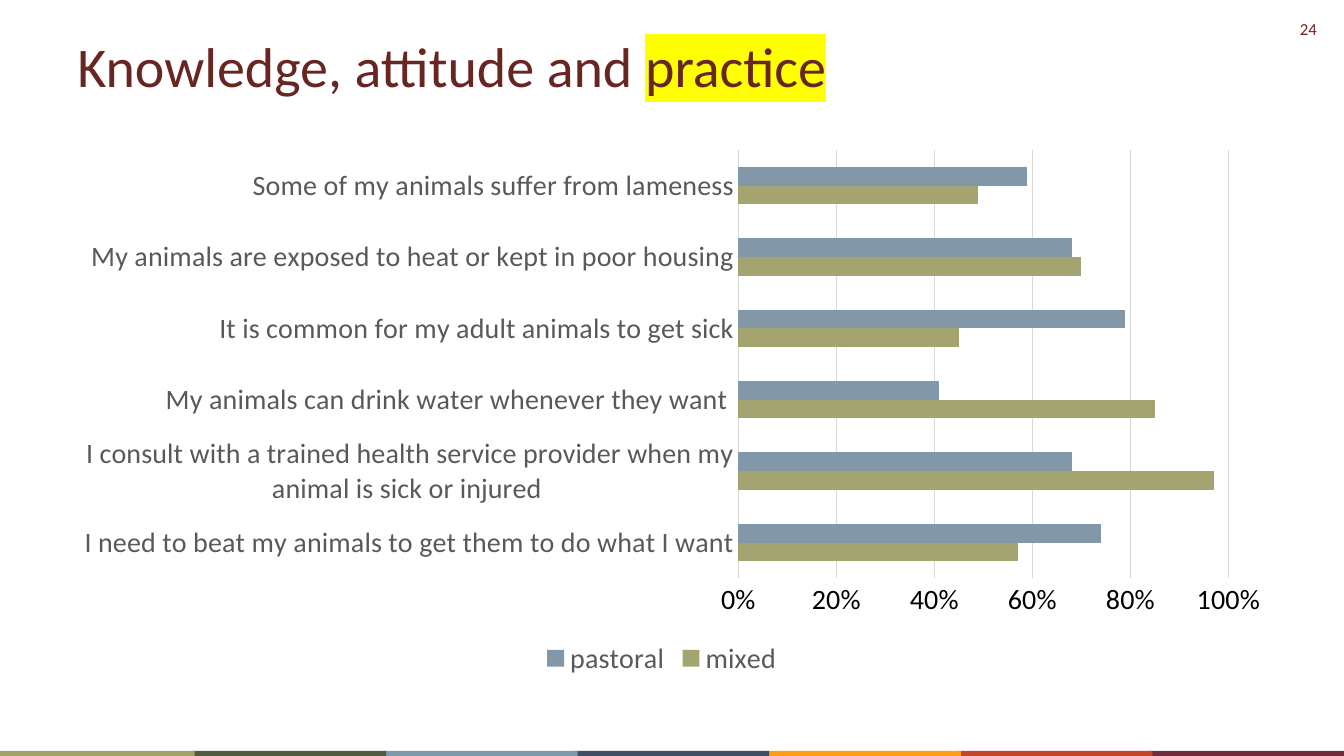
from lxml import etree
from pptx import Presentation
from pptx.chart.data import CategoryChartData
from pptx.dml.color import RGBColor
from pptx.enum.chart import XL_CHART_TYPE as ChartType, XL_LEGEND_POSITION as LegendPosition
from pptx.enum.chart import XL_TICK_MARK as TickMark
from pptx.enum.shapes import MSO_SHAPE as Preset
from pptx.enum.text import PP_ALIGN as Align
from pptx.oxml import parse_xml
from pptx.oxml.ns import qn
from pptx.util import Inches, Pt

FONT = "Calibri"
GRAY = "595959"
RULE = "D9D9D9"


def paint(target, color):
    """Give a fill, or the fill of a line or font, one solid colour."""
    fill = target if hasattr(target, "solid") else target.fill
    fill.solid()
    fill.fore_color.rgb = RGBColor.from_string(color)


def write(paragraph, text, size, color, align=Align.LEFT, highlight=None):
    paragraph.alignment = align
    run = paragraph.add_run()
    run.text = text
    run.font.name = FONT
    run.font.size = Pt(size)
    paint(run.font, color)
    if highlight:
        marker = etree.Element(qn("a:highlight"))
        etree.SubElement(marker, qn("a:srgbClr"), val=highlight)
        run.font._element.find(qn("a:solidFill")).addnext(marker)


prs = Presentation()
prs.slide_width, prs.slide_height = Inches(13.33), Inches(7.5)
slide = prs.slides.add_slide(prs.slide_layouts[6])

# Page number
page_number = slide.shapes.add_textbox(Inches(12.46), Inches(0.14), Inches(0.7), Inches(0.3)).text_frame
page_number.word_wrap = True
write(page_number.paragraphs[0], "24", 12, "762123", align=Align.RIGHT)

# Colour strip along the bottom, from right to left so that each piece overlaps the next
strip_colors = ["A3A467", "53593E", "7C98AB", "404E65", "FF9E16", "C34628", "712C3D"]
for i, color in reversed(list(enumerate(strip_colors))):
    piece = slide.shapes.add_shape(
        Preset.RECTANGLE, Inches(i * 1.9), Inches(7.45), Inches(1.93), Inches(0.06))
    piece.shadow.inherit = False
    paint(piece.fill, color)
    piece.line.fill.background()

# Title
title = slide.shapes.add_textbox(Inches(0.67), Inches(0.24), Inches(12), Inches(0.74)).text_frame
title.word_wrap = True
title.margin_top = Inches(0.07)
write(title.paragraphs[0], "Knowledge, attitude and ", 40, "682622")
write(title.paragraphs[0], "practice", 40, "682622", highlight="FFFF00")

# Survey chart
survey = CategoryChartData(number_format="0%")
survey.categories = [
    "I need to beat my animals to get them to do what I want",
    " I consult with a trained health service provider when my animal is sick or injured",
    " My animals can drink water whenever they want ",
    " It is common for my adult animals to get sick",
    "My animals are exposed to heat or kept in poor housing",
    "Some of my animals suffer from lameness",
]
survey.add_series("mixed ", [0.57, 0.97, 0.85, 0.45, 0.7, 0.49])
survey.add_series("pastoral", [0.74, 0.68, 0.41, 0.79, 0.68, 0.59])
chart = slide.shapes.add_chart(
    ChartType.BAR_CLUSTERED, Inches(0.52), Inches(1.38), Inches(12.15), Inches(5.38), survey).chart
chart.has_title = False
chart.font.name = FONT
chart.font.size = Pt(10)

bars = chart.plots[0]
bars.gap_width = 182
bars.vary_by_categories = False
for series, color in zip(bars.series, ["A3A470", "8298A8"]):
    paint(series.format.fill, color)

statements, shares = chart.category_axis, chart.value_axis
chart.has_legend = True
chart.legend.position = LegendPosition.BOTTOM
chart.legend.include_in_layout = False
for font, color in [(statements.tick_labels.font, GRAY),
                    (shares.tick_labels.font, "000000"),
                    (chart.legend.font, GRAY)]:
    font.name = FONT
    font.size = Pt(20)
    paint(font, color)

for axis in (statements, shares):
    axis.major_tick_mark = axis.minor_tick_mark = TickMark.NONE
statements.has_major_gridlines = False
shares.has_major_gridlines = True
for line in (statements.format.line, shares.major_gridlines.format.line):
    paint(line, RULE)
    line.width = Pt(0.75)
shares.format.line.fill.background()
shares.minimum_scale, shares.maximum_scale, shares.major_unit = 0, 1, 0.2
shares.tick_labels.number_format = "0%"
shares.tick_labels.number_format_is_linked = False

# Place of the bars inside the chart, as fractions of its size
plot_area = chart._chartSpace.chart.plotArea
for old_layout in plot_area.findall(qn("c:layout")):
    plot_area.remove(old_layout)
plot_area.insert(0, parse_xml(
    '<c:layout xmlns:c="http://schemas.openxmlformats.org/drawingml/2006/chart"><c:manualLayout>'
    '<c:layoutTarget val="inner"/><c:xMode val="edge"/><c:yMode val="edge"/>'
    '<c:x val="0.56"/><c:y val="0.02"/><c:w val="0.4"/><c:h val="0.79"/>'
    '</c:manualLayout></c:layout>'))

prs.save("out.pptx")
